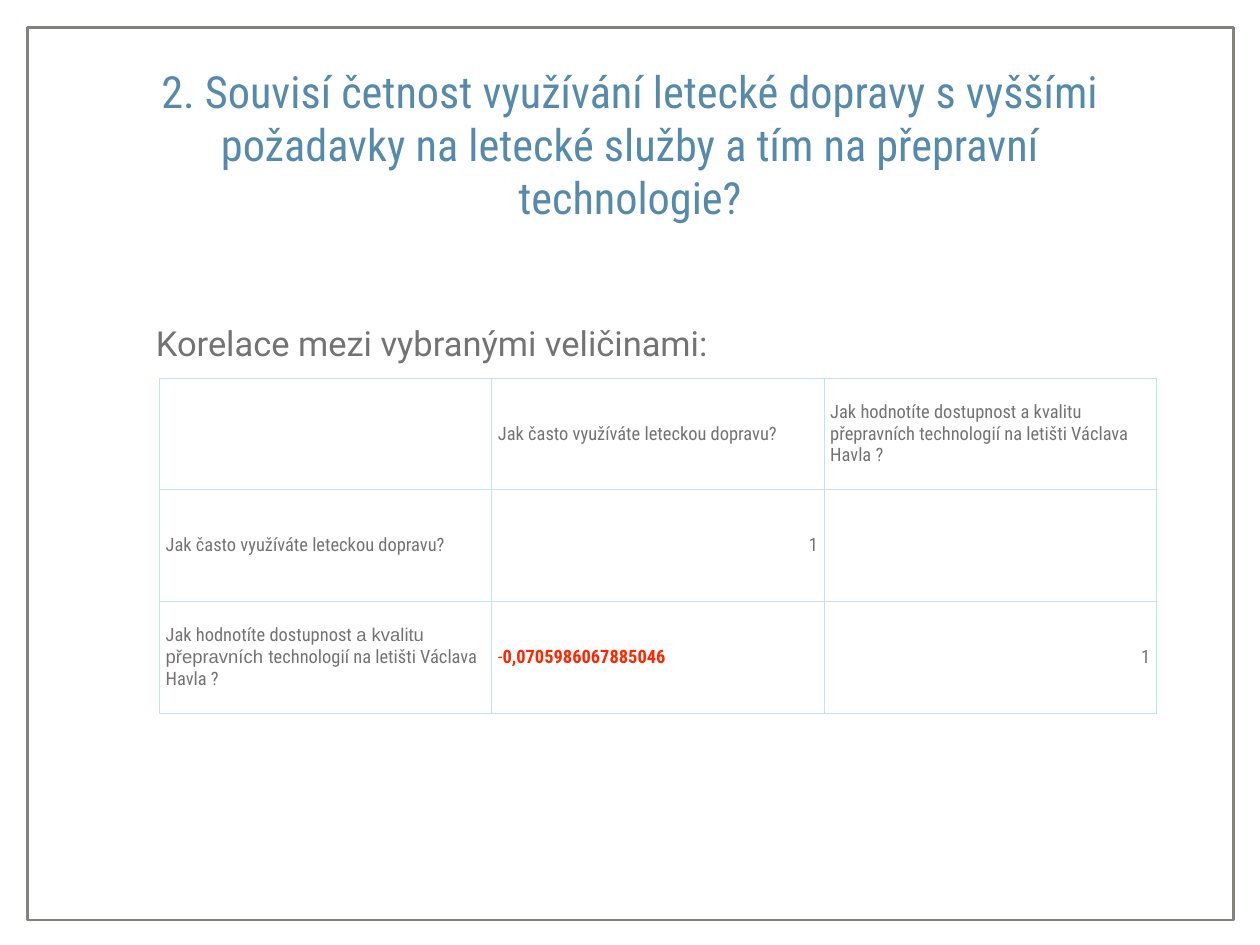
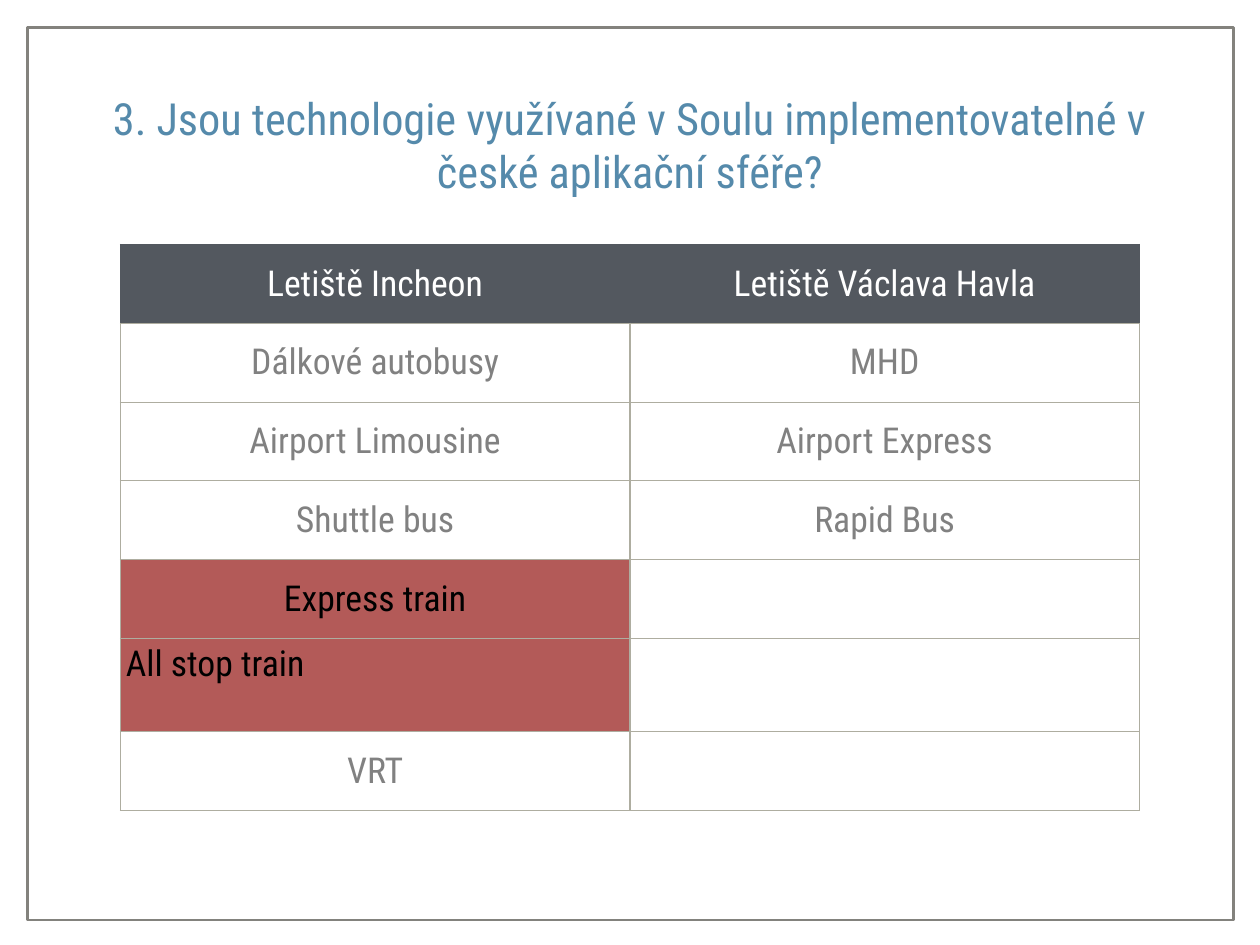
from lxml import etree
from pptx import Presentation
from pptx.dml.color import RGBColor
from pptx.enum.shapes import MSO_SHAPE
from pptx.enum.text import MSO_ANCHOR, MSO_AUTO_SIZE, PP_ALIGN
from pptx.oxml.ns import qn
from pptx.util import Pt

PX = 9144
LEFT, CENTER, RIGHT = PP_ALIGN.LEFT, PP_ALIGN.CENTER, PP_ALIGN.RIGHT
TOP, MIDDLE = MSO_ANCHOR.TOP, MSO_ANCHOR.MIDDLE
NO_AUTOFIT = MSO_AUTO_SIZE.NONE
RECTANGLE = MSO_SHAPE.RECTANGLE
CONDENSED = "Roboto Condensed"
FRAME_GRAY, TITLE_BLUE, TEXT_GRAY = "83827D", "558AAB", "737373"
WHITE, BLACK, SLATE, BRICK, RED = "FFFFFF", "000000", "53585F", "B35A58", "FF2600"
CELL_GRAY, PALE_BLUE, SAND = "818181", "C2E3ED", "AEADA0"
rgb = RGBColor.from_string


def write(text_frame, text, size, color, align=LEFT, font=CONDENSED, bold=False):
    paragraph = text_frame.paragraphs[0]
    paragraph.alignment = align
    run = paragraph.add_run()
    run.text = text
    run.font.size = Pt(size)
    run.font.name = font
    run.font.bold = bold
    run.font.color.rgb = rgb(color)


def add_grid(slide, left, top, col_width, heights, columns, border, border_pt, margins):
    grid = slide.shapes.add_table(len(heights), columns, left * PX, top * PX,
                                  columns * col_width * PX, sum(heights) * PX).table
    grid.first_row = grid.horz_banding = False
    for column in grid.columns:
        column.width = col_width * PX
    for row, height in zip(grid.rows, heights):
        row.height = height * PX
    for cell in grid.iter_cells():
        cell.margin_left = cell.margin_right = margins[0] * PX
        cell.margin_top = cell.margin_bottom = margins[1] * PX
        cell.vertical_anchor = MIDDLE
        properties = cell._tc.get_or_add_tcPr()
        for side in ("a:lnL", "a:lnR", "a:lnT", "a:lnB"):
            line = etree.SubElement(properties, qn(side), w=str(Pt(border_pt)))
            solid = etree.SubElement(line, qn("a:solidFill"))
            etree.SubElement(solid, qn("a:srgbClr"), val=border)
        cell.fill.solid()
        cell.fill.fore_color.rgb = rgb(WHITE)
    return grid


prs = Presentation()
prs.slide_width, prs.slide_height = 1422 * PX, 1067 * PX
title_only = prs.slide_layouts[5]

titles = [
    "2. Souvisí četnost využívání letecké dopravy s vyššími požadavky "
    "na letecké služby a tím na přepravní technologie?",
    "3. Jsou technologie využívané v Soulu implementovatelné v české aplikační sféře?",
]
slides = []
for heading in titles:
    slide = prs.slides.add_slide(title_only)
    title = slide.shapes.title
    title.left, title.top, title.width, title.height = [n * PX for n in (114, 29, 1194, 267)]
    frame = title.text_frame
    frame.margin_left = frame.margin_right = frame.margin_top = frame.margin_bottom = 6 * PX
    frame.vertical_anchor = MIDDLE
    frame.word_wrap = True
    frame.auto_size = NO_AUTOFIT
    write(frame, heading, 36, TITLE_BLUE, CENTER)
    slides.append(slide)
correlation_slide, airports_slide = slides

border_frame = correlation_slide.shapes.add_shape(RECTANGLE, 31 * PX, 31 * PX, 1361 * PX, 1008 * PX)
border_frame.shadow.inherit = False
border_frame.fill.background()
border_frame.line.color.rgb = rgb(FRAME_GRAY)
border_frame.line.width = Pt(2)
border_frame.element.nvSpPr.cNvPr.set("id", "20")
title_only.shapes.element.append(border_frame.element)

frequency = "Jak často využíváte leteckou dopravu?"
quality = ["Jak hodnotíte dostupnost ", "a kvalitu přepravních ", "technologií na letišti Václava Havla ?"]
correlation = add_grid(correlation_slide, 180, 427, 375, [126] * 3, 3, PALE_BLUE, 0.5, (7, 0))
for row, column, text, align in [
    (0, 1, frequency, LEFT),
    (0, 2, "".join(quality), LEFT),
    (1, 0, frequency, LEFT),
    (1, 1, "1", RIGHT),
    (2, 2, "1", RIGHT),
]:
    write(correlation.cell(row, column).text_frame, text, 15, TEXT_GRAY, align)
for text, font in zip(quality, (CONDENSED, "Arial", CONDENSED)):
    write(correlation.cell(2, 0).text_frame, text, 15, TEXT_GRAY, font=font)
coefficient = correlation.cell(2, 1).text_frame
write(coefficient, "-", 15, RED)
write(coefficient, "0,0705986067885046", 15, RED, bold=True)

caption = correlation_slide.shapes.add_textbox(170 * PX, 358 * PX, 1082 * PX, 57 * PX).text_frame
caption.word_wrap = True
caption.vertical_anchor = MIDDLE
caption.margin_left = caption.margin_right = caption.margin_top = caption.margin_bottom = 6 * PX
write(caption, "Korelace mezi vybranými veličinami:", 28, TEXT_GRAY, font="Roboto")

transport = [
    ("Letiště Incheon", "Letiště Václava Havla"),
    ("Dálkové autobusy", "MHD"),
    ("Airport Limousine", "Airport Express"),
    ("Shuttle bus", "Rapid Bus"),
    ("Express train", ""),
    ("All stop train", ""),
    ("VRT", ""),
]
row_heights = [89] * 5 + [105, 89]
airports = add_grid(airports_slide, 136, 276, 575, row_heights, 2, SAND, 1, (6, 6))
for row, names in enumerate(transport):
    for column, name in enumerate(names):
        cell = airports.cell(row, column)
        color = CELL_GRAY
        if row == 0:
            color = WHITE
            cell.fill.fore_color.rgb = rgb(SLATE)
            for border_color in cell._tc.tcPr.iter(qn("a:srgbClr")):
                border_color.set("val", SLATE)
        elif name.endswith("train"):
            color = BLACK
            cell.fill.fore_color.rgb = rgb(BRICK)
        if name:
            write(cell.text_frame, name, 29, color, CENTER)
all_stop = airports.cell(5, 0)
all_stop.vertical_anchor = TOP
all_stop.text_frame.paragraphs[0].alignment = LEFT

prs.save("out.pptx")
